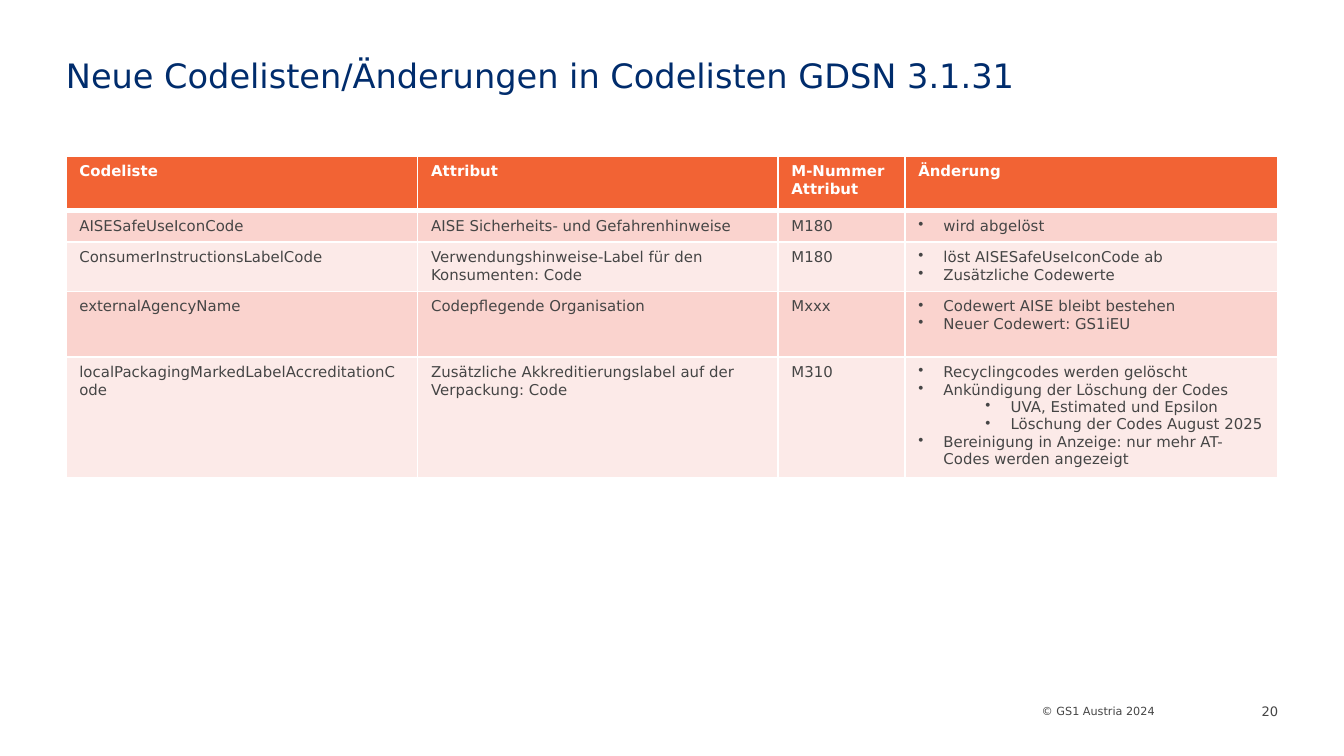
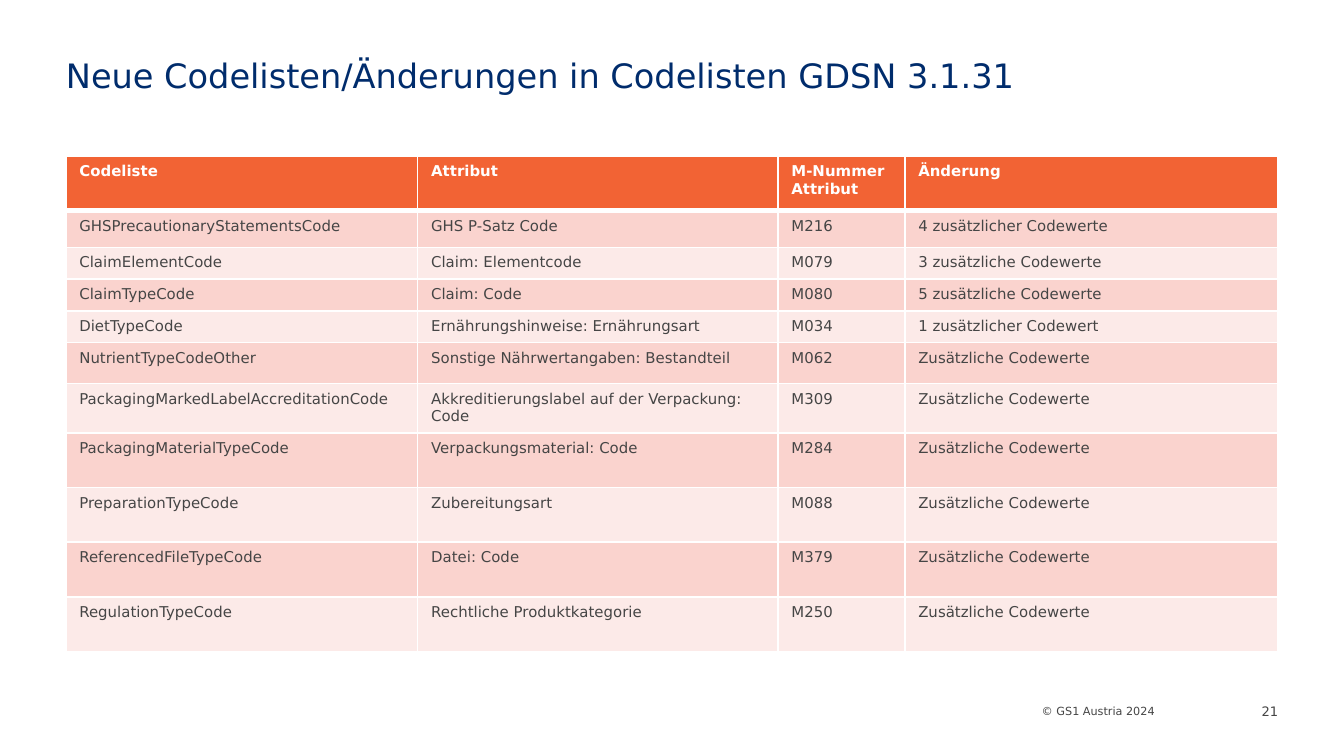
from lxml.etree import SubElement
from pptx import Presentation
from pptx.dml.color import RGBColor
from pptx.enum.text import MSO_ANCHOR as Anchor, PP_ALIGN as Align
from pptx.oxml.ns import qn
from pptx.util import Pt

FONT = "DejaVu Sans"
NAVY, GREY, WHITE = "002C6C", "454545", "FFFFFF"
ORANGE, BANDS = "F26334", ("FAD3CE", "FCEAE8")
LEFT, WIDTH = 35.3, 649.4
COLUMN_WIDTHS = (188.5, 193, 68, 199.9)
HEADER_HEIGHT = 29.3
BULLET_INDENT, LEVEL_INDENT = 13.5, 36

TITLE = "Neue Codelisten/Änderungen in Codelisten GDSN 3.1.31"
COPYRIGHT = "© GS1 Austria 2024"
HEADER = ("Codeliste", "Attribut", "M-Nummer Attribut", "Änderung")
MORE_VALUES = "Zusätzliche Codewerte"

# Each row: height, code list, attribute, number, change.
# A change given as a list holds bullets as (level, text).
REPLACED_LISTS = [
    (16.4, "AISESafeUseIconCode", "AISE Sicherheits- und Gefahrenhinweise", "M180",
     [(0, "wird abgelöst")]),
    (26.3, "ConsumerInstructionsLabelCode",
     "Verwendungshinweise-Label für den Konsumenten: Code", "M180",
     [(0, "löst AISESafeUseIconCode ab"), (0, MORE_VALUES)]),
    (35.2, "externalAgencyName", "Codepflegende Organisation", "Mxxx",
     [(0, "Codewert AISE bleibt bestehen"), (0, "Neuer Codewert: GS1iEU")]),
    (63, "localPackagingMarkedLabelAccreditationCode",
     "Zusätzliche Akkreditierungslabel auf der Verpackung: Code", "M310",
     [(0, "Recyclingcodes werden gelöscht"),
      (0, "Ankündigung der Löschung der Codes"),
      (1, "UVA, Estimated und Epsilon"),
      (1, "Löschung der Codes August 2025"),
      (0, "Bereinigung in Anzeige: nur mehr AT-Codes werden angezeigt")]),
]
EXTENDED_LISTS = [
    (19.7, "GHSPrecautionaryStatementsCode", "GHS P-Satz Code", "M216",
     "4 zusätzlicher Codewerte"),
    (17, "ClaimElementCode", "Claim: Elementcode", "M079", "3 zusätzliche Codewerte"),
    (17, "ClaimTypeCode", "Claim: Code", "M080", "5 zusätzliche Codewerte"),
    (17, "DietTypeCode", "Ernährungshinweise: Ernährungsart", "M034",
     "1 zusätzlicher Codewert"),
    (22, "NutrientTypeCodeOther", "Sonstige Nährwertangaben: Bestandteil", "M062",
     MORE_VALUES),
    (25.9, "PackagingMarkedLabelAccreditationCode",
     "Akkreditierungslabel auf der Verpackung: Code", "M309", MORE_VALUES),
    (29.3, "PackagingMaterialTypeCode", "Verpackungsmaterial: Code", "M284", MORE_VALUES),
    (29.3, "PreparationTypeCode", "Zubereitungsart", "M088", MORE_VALUES),
    (29.3, "ReferencedFileTypeCode", "Datei: Code", "M379", MORE_VALUES),
    (29.3, "RegulationTypeCode", "Rechtliche Produktkategorie", "M250", MORE_VALUES),
]


def color(value):
    return RGBColor.from_string(value)


class Deck:
    def __init__(self):
        self.presentation = Presentation()
        self.presentation.slide_width = Pt(720)
        self.presentation.slide_height = Pt(405)
        self.slide = None

    def style(self, paragraph, size, hue, bold=False):
        formats = {"name": FONT, "size": Pt(size), "bold": bold}
        for name, value in formats.items():
            setattr(paragraph.font, name, value)
        paragraph.font.color.rgb = color(hue)

    def text(self, box, content, size, hue, align=Align.LEFT, anchor=Anchor.MIDDLE,
             margins=(0, 0, 0, 0)):
        frame = self.slide.shapes.add_textbox(*map(Pt, box)).text_frame
        left, top, right, bottom = map(Pt, margins)
        formats = {"word_wrap": True, "vertical_anchor": anchor, "margin_left": left,
                   "margin_top": top, "margin_right": right, "margin_bottom": bottom}
        for name, value in formats.items():
            setattr(frame, name, value)
        paragraph = frame.paragraphs[0]
        paragraph.text, paragraph.alignment = content, align
        self.style(paragraph, size, hue)

    def add_slide(self, number):
        layout = self.presentation.slide_layouts[6]
        self.slide = self.presentation.slides.add_slide(layout)
        # Footer and title
        self.text((400.3, 377.3, 218.2, 7.9), COPYRIGHT, 6, GREY, Align.RIGHT, Anchor.TOP)
        self.text((LEFT, 13.7, WIDTH, 53.3), TITLE, 18, NAVY, margins=(0, 3.6, 7.2, 3.6))
        self.text((665.3, 375.1, 19.4, 11.5), str(number), 7, GREY, Align.RIGHT)

    def bullet(self, paragraph, level):
        paragraph.level = level
        properties = paragraph._p.get_or_add_pPr()
        properties.set("marL", str(Pt(BULLET_INDENT + level * LEVEL_INDENT)))
        properties.set("indent", str(-Pt(BULLET_INDENT)))
        SubElement(properties, qn("a:buChar"), char="•")

    def borders(self, cell, **widths):
        for side in "LRTB":
            line = SubElement(cell._tc.get_or_add_tcPr(), qn("a:ln" + side),
                              w=str(Pt(widths.get(side, 1))))
            SubElement(SubElement(line, qn("a:solidFill")), qn("a:srgbClr"), val=WHITE)

    def cell(self, cell, content, fill, hue, bold=False, **border_widths):
        self.borders(cell, **border_widths)
        cell.fill.solid()
        cell.fill.fore_color.rgb = color(fill)
        bulleted = isinstance(content, list)
        frame = cell.text_frame
        for index, (level, line) in enumerate(content if bulleted else [(0, content)]):
            paragraph = frame.add_paragraph() if index else frame.paragraphs[0]
            paragraph.text = line
            if bulleted:
                self.bullet(paragraph, level)
            self.style(paragraph, 8, hue, bold)

    def table(self, rows):
        heights = [HEADER_HEIGHT] + [row[0] for row in rows]
        table = self.slide.shapes.add_table(
            len(heights), len(HEADER), Pt(LEFT), Pt(83.6), Pt(WIDTH), Pt(sum(heights))).table
        table.horz_banding = False
        for column, width in zip(table.columns, COLUMN_WIDTHS):
            column.width = Pt(width)
        for row, height in zip(table.rows, heights):
            row.height = Pt(height)
        # Header row, closed by a thick rule
        for column, label in enumerate(HEADER):
            self.cell(table.cell(0, column), label, ORANGE, WHITE, True, B=3)
        # Banded body rows
        for index, (_, *contents) in enumerate(rows):
            for column, content in enumerate(contents):
                self.cell(table.cell(index + 1, column), content, BANDS[index % 2], GREY,
                          T=1 if index else 3)


def main():
    deck = Deck()
    for number, rows in enumerate((REPLACED_LISTS, EXTENDED_LISTS), start=20):
        deck.add_slide(number)
        deck.table(rows)
    deck.presentation.save("out.pptx")


if __name__ == "__main__":
    main()
